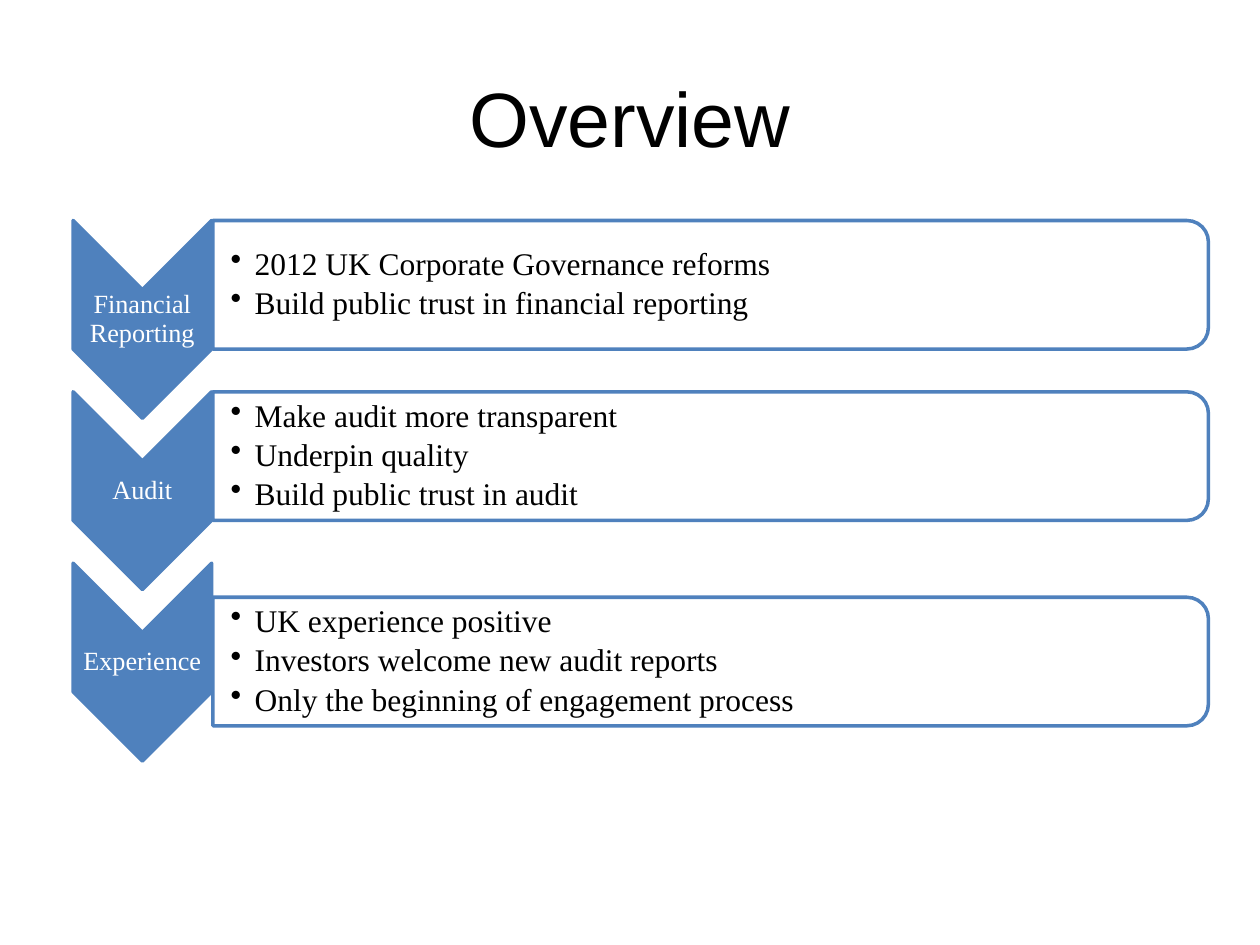
import pptx
import pptx.util
import pptx.dml.color
import pptx.enum.shapes
import pptx.enum.text
import pptx.oxml.ns
import lxml.etree

Inches, Pt = pptx.util.Inches, pptx.util.Pt
SHAPE = pptx.enum.shapes.MSO_SHAPE
ALIGN = pptx.enum.text.PP_ALIGN
MIDDLE = pptx.enum.text.MSO_ANCHOR.MIDDLE
qn = pptx.oxml.ns.qn

# Content: label, panel offset below the row top, bullet points
TITLE = "Overview"
TOPICS = [
    ("Financial Reporting", 0, [
        "2012 UK Corporate Governance reforms",
        "Build public trust in financial reporting"]),
    ("Audit", 0, [
        "Make audit more transparent",
        "Underpin quality",
        "Build public trust in audit"]),
    ("Experience", 0.27, [
        "UK experience positive",
        "Investors welcome new audit reports",
        "Only the beginning of engagement process"]),
]

# Grid, in inches
TOP, PITCH = 1.75, 1.36
CHEVRON_LEFT, CHEVRON_W, CHEVRON_H = 0.58, 1.1, 1.57
PANEL_LEFT, PANEL_W, PANEL_H = 1.69, 7.9, 1.02
LABEL_H, POINTS_W, POINTS_H = 0.47, 7.85, 0.92
BLUE, WHITE, BLACK = "4F81BD", "FFFFFF", "000000"


def color(value):
    return pptx.dml.color.RGBColor.from_string(value)


def add_turned(group, preset, left, top, width, height, fill, opacity=100):
    """Place a shape turned by 90 degrees; width and height are as seen."""
    x, y = left + (width - height) / 2, top + (height - width) / 2
    shape = group.shapes.add_shape(
        preset, Inches(x), Inches(y), Inches(height), Inches(width))
    shape.rotation = 90
    shape.shadow.inherit = False
    shape.fill.solid()
    shape.fill.fore_color.rgb = color(fill)
    shape.line.color.rgb = color(BLUE)
    shape.line.width = Pt(2)
    if opacity < 100:
        tint = shape._element.spPr.find(qn("a:solidFill"))[0]
        lxml.etree.SubElement(tint, qn("a:alpha"), val=str(opacity * 1000))


def add_text(group, lines, left, top, width, height, size, ink, bulleted):
    box = group.shapes.add_textbox(*map(Inches, (left, top, width, height)))
    frame = box.text_frame
    frame.word_wrap = True
    frame.vertical_anchor = MIDDLE
    frame.margin_top = frame.margin_bottom = frame.margin_right = Inches(0.01)
    frame.margin_left = Inches(0.14 if bulleted else 0.01)
    for i, line in enumerate(lines):
        para = frame.add_paragraph() if i else frame.paragraphs[0]
        para.line_spacing = 0.9
        para.space_after = Pt(3 if bulleted else 6)
        para.alignment = ALIGN.LEFT if bulleted else ALIGN.CENTER
        if bulleted:
            para.level = 1
            props = para._p.get_or_add_pPr()
            props.set("marL", str(Inches(0.19)))
            props.set("indent", str(-Inches(0.19)))
            lxml.etree.SubElement(props, qn("a:buChar"), char="•")
        run = para.add_run()
        run.text = line
        run.font.size = Pt(size)
        run.font.name = "Times New Roman"
        run.font.color.rgb = color(ink)


deck = pptx.Presentation()
deck.slide_width, deck.slide_height = Inches(10), Inches(7.5)
slide = deck.slides.add_slide(deck.slide_layouts[5])

# Title
title = slide.shapes.title
title.left, title.top, title.width, title.height = map(
    Inches, (0.5, 0.3, 9, 1.25))
title.text_frame.vertical_anchor = MIDDLE
heading = title.text_frame.paragraphs[0]
heading.alignment = ALIGN.CENTER
run = heading.add_run()
run.text = TITLE
run.font.size = Pt(44)
run.font.name = "Arial"
run.font.color.rgb = color(BLACK)

# One row per topic: chevron with label, panel with points
diagram = slide.shapes.add_group_shape()
for row, (label, drop, points) in enumerate(TOPICS):
    top = TOP + row * PITCH
    panel_top = top + drop
    add_turned(diagram, SHAPE.CHEVRON, CHEVRON_LEFT, top,
               CHEVRON_W, CHEVRON_H, BLUE)
    add_text(diagram, [label], CHEVRON_LEFT, top + CHEVRON_W / 2,
             CHEVRON_W, LABEL_H, 15, WHITE, False)
    add_turned(diagram, SHAPE.ROUND_2_SAME_RECTANGLE, PANEL_LEFT, panel_top,
               PANEL_W, PANEL_H, WHITE, opacity=90)
    add_text(diagram, points, PANEL_LEFT,
             panel_top + (PANEL_H - POINTS_H) / 2,
             POINTS_W, POINTS_H, 18, BLACK, True)

deck.save("out.pptx")
